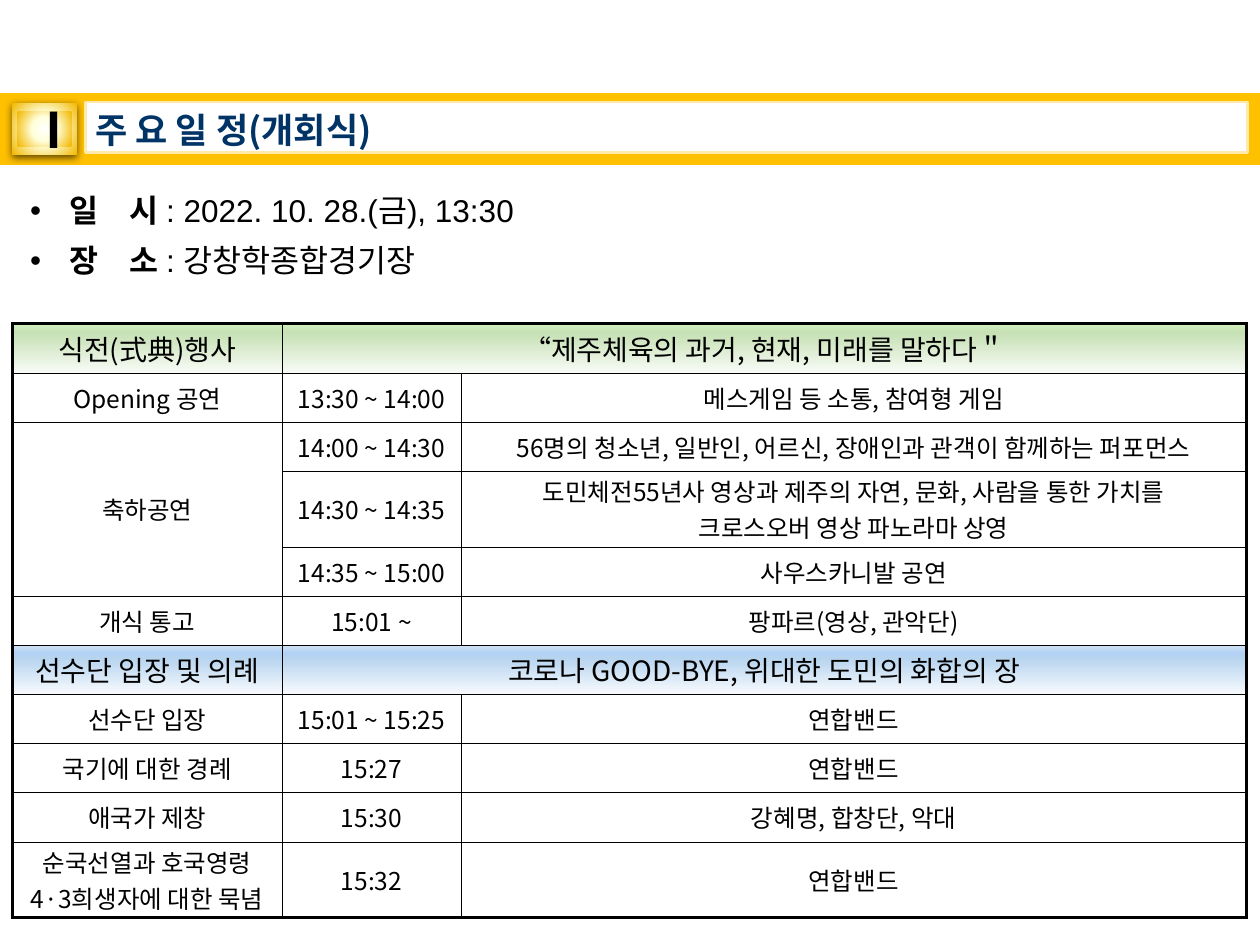
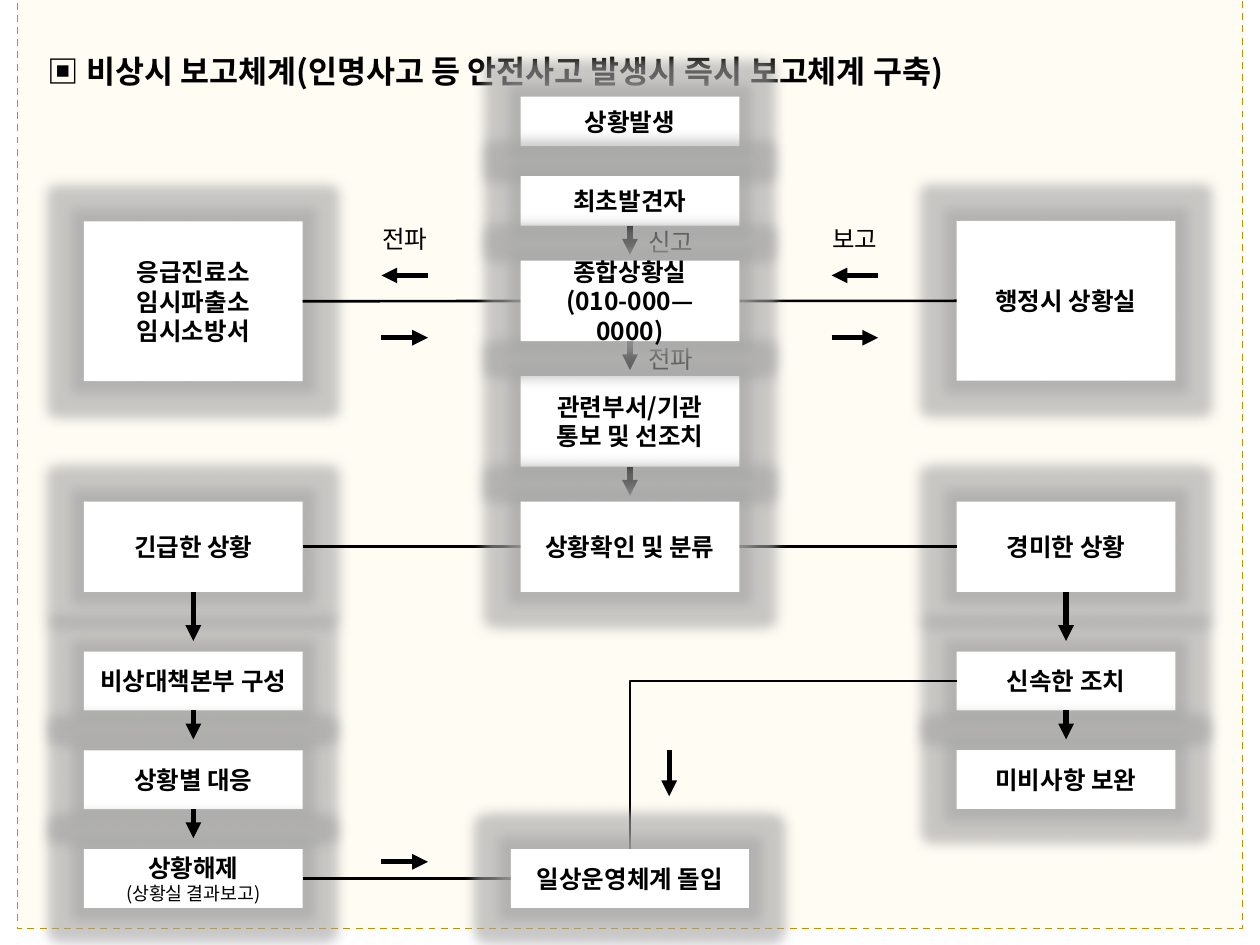
from lxml import etree
from pptx import Presentation
from pptx.dml.color import RGBColor
from pptx.enum.dml import MSO_LINE
from pptx.enum.shapes import MSO_CONNECTOR as Connector, MSO_SHAPE as Shape
from pptx.enum.text import MSO_ANCHOR as Anchor, MSO_AUTO_SIZE as AutoSize, PP_ALIGN as Align
from pptx.oxml import parse_xml
from pptx.oxml.ns import nsdecls, qn
from pptx.util import Pt

BLACK = RGBColor(0, 0, 0)
WHITE = RGBColor(255, 255, 255)
NAVY = RGBColor(0x00, 0x33, 0x66)
AMBER = RGBColor(0xFF, 0xC0, 0x00)
PALE_AMBER = RGBColor(0xFF, 0xEA, 0xAB)
CREAM = RGBColor(0xFF, 0xF6, 0xDD)
GOLD = RGBColor(0xBF, 0x90, 0x00)
GLOW_GREY = RGBColor(0xA5, 0xA5, 0xA5)
GREENS = [(0, RGBColor(0xF8, 0xFB, 0xF6)), (74, RGBColor(0xCB, 0xE3, 0xBB)),
          (83, RGBColor(0xC7, 0xE1, 0xB5)), (100, RGBColor(0xD2, 0xF1, 0xBD))]
BLUES = [(0, RGBColor(0xF7, 0xFA, 0xFD)), (74, RGBColor(0xB7, 0xD4, 0xEF)),
         (83, RGBColor(0xB2, 0xD1, 0xF4)), (100, RGBColor(0xD1, 0xE3, 0xF3))]
YELLOWS = [(0, WHITE), (40, RGBColor(0xFF, 0xFF, 0xD9)), (100, RGBColor(0xF2, 0xB8, 0x00))]
KOREAN = "Noto Sans CJK KR"
A = nsdecls("a")
UPWARD = '<a:lin ang="16200000" scaled="0"/>'
RADIAL = '<a:path path="circle"><a:fillToRect l="50000" t="50000" r="50000" b="50000"/></a:path>'


def style(frame, align, color=BLACK, **formats):
    for para in frame.paragraphs:
        para.alignment = align
        for span in para.runs:
            for name, value in {"name": KOREAN, **formats}.items():
                setattr(span.font, name, value)
            span.font.color.rgb = color
            etree.SubElement(span.font._element, qn("a:ea")).set("typeface", KOREAN)


def gradient(stops, direction):
    marks = "".join(f'<a:gs pos="{pos * 1000}"><a:srgbClr val="{color}"/></a:gs>' for pos, color in stops)
    return parse_xml(f'<a:gradFill {A} rotWithShape="1"><a:gsLst>{marks}</a:gsLst>{direction}</a:gradFill>')


deck = Presentation()
deck.slide_width, deck.slide_height = Pt(720), Pt(540)

page = deck.slides.add_slide(deck.slide_layouts[1])
tree = page.shapes.title.element.getparent()
band = page.shapes.add_shape(Shape.RECTANGLE, Pt(0), Pt(53.3), Pt(720), Pt(41))
band.shadow.inherit = False
band.fill.solid()
band.fill.fore_color.rgb = AMBER
band.line.fill.background()

title = page.shapes.title
tree.append(title.element)
title.left, title.top, title.width, title.height = Pt(49), Pt(58.3), Pt(664), Pt(29)
title.fill.solid()
title.fill.fore_color.rgb = WHITE
title.line.color.rgb = PALE_AMBER
title.line.width = Pt(1.5)
frame = title.text_frame
frame.text = "주 요 일 정(개회식)"
for name, value in {"margin_left": Pt(5.5), "margin_right": 0, "margin_top": 0, "margin_bottom": 0,
                    "vertical_anchor": Anchor.MIDDLE, "auto_size": AutoSize.NONE}.items():
    setattr(frame, name, value)
frame.paragraphs[0].line_spacing = 1.1
style(frame, Align.LEFT, NAVY, size=Pt(20), bold=True)

schedule = [
    ("식전(式典)행사", "“제주체육의 과거, 현재, 미래를 말하다＂", ""),
    ("Opening 공연", "13:30 ~ 14:00", "메스게임 등 소통, 참여형 게임"),
    ("축하공연", "14:00 ~ 14:30", "56명의 청소년, 일반인, 어르신, 장애인과 관객이 함께하는 퍼포먼스"),
    ("", "14:30 ~ 14:35", "도민체전55년사 영상과 제주의 자연, 문화, 사람을 통한 가치를\n크로스오버 영상 파노라마 상영"),
    ("", "14:35 ~ 15:00", "사우스카니발 공연"),
    ("개식 통고", "15:01 ~", "팡파르(영상, 관악단)"),
    ("선수단 입장 및 의례", "코로나 GOOD-BYE, 위대한 도민의 화합의 장", ""),
    ("선수단 입장", "15:01 ~ 15:25", "연합밴드"),
    ("국기에 대한 경례", "15:27", "연합밴드"),
    ("애국가 제창", "15:30", "강혜명, 합창단, 악대"),
    ("순국선열과 호국영령\n4·3희생자에 대한 묵념", "15:32", "연합밴드"),
]
section_fills = {0: GREENS, 6: BLUES}
last_row, last_column = len(schedule) - 1, 2
table = page.shapes.add_table(len(schedule), 3, Pt(7.2), Pt(185), Pt(705), Pt(340)).table
table.first_row = table.horz_banding = False
for column, width in zip(table.columns, (154, 102.3, 448.7)):
    column.width = Pt(width)
for row_index, texts in enumerate(schedule):
    table.rows[row_index].height = Pt(43.2 if any("\n" in text for text in texts) else 28.1)
    for column_index, text in enumerate(texts):
        cell = table.cell(row_index, column_index)
        cell.vertical_anchor = Anchor.MIDDLE
        for side in ("left", "right", "top", "bottom"):
            setattr(cell, f"margin_{side}", Pt(0.7))
        if text:
            cell.text_frame.text = text
            style(cell.text_frame, Align.CENTER, size=Pt(16 if row_index in section_fills else 14))
        properties = cell._tc.get_or_add_tcPr()
        outer_edges = {"L": column_index == 0, "R": column_index == last_column or (
            row_index in section_fills and column_index == 1), "T": row_index == 0, "B": row_index == last_row}
        for side, outer in outer_edges.items():
            width = Pt(1.7 if outer else 0.28)
            properties.append(parse_xml(
                f'<a:ln{side} {A} w="{width}"><a:solidFill><a:srgbClr val="{BLACK}"/></a:solidFill></a:ln{side}>'))
        if row_index in section_fills:
            properties.append(gradient(section_fills[row_index], UPWARD))
        else:
            cell.fill.background()
for row_index in section_fills:
    table.cell(row_index, 1).merge(table.cell(row_index, 2))
table.cell(2, 0).merge(table.cell(4, 0))

body = page.placeholders[1]
tree.append(body.element)
body.left, body.top, body.width, body.height = Pt(10), Pt(105.8), Pt(314), Pt(66)
frame = body.text_frame
frame.auto_size = AutoSize.NONE
frame.text = "일　시 \n장　소 "
for para, detail in zip(frame.paragraphs, (": 2022. 10. 28.(금), 13:30", ": 강창학종합경기장")):
    para.add_run().text = detail
    para.space_before = Pt(0 if detail.startswith(": 2022") else 7)
    for name, value in {"marL": Pt(22.5), "indent": -Pt(22.5)}.items():
        para._p.get_or_add_pPr().set(name, str(value))
style(frame, Align.LEFT, name="Arial", size=Pt(18), bold=False)
for para in frame.paragraphs:
    para.runs[0].font.bold = True

badge = page.shapes.add_group_shape()
for left, top, width, height in ((7, 59, 37, 29.5), (10, 64, 31, 19.5)):
    box = badge.shapes.add_shape(Shape.RECTANGLE, Pt(left), Pt(top), Pt(width), Pt(height))
    box.line.fill.background()
    box.shadow.inherit = False
    box.element.spPr.insert(2, gradient(YELLOWS, RADIAL))
plate, face = badge.shapes
plate.element.spPr.find(qn("a:effectLst")).append(parse_xml(
    f'<a:outerShdw {A} blurRad="{Pt(4.5)}" dist="{Pt(1.5)}" dir="5400000" rotWithShape="0">'
    f'<a:srgbClr val="{BLACK}"><a:alpha val="63000"/></a:srgbClr></a:outerShdw>'))
face.text_frame.text = "Ⅰ"
face.text_frame.vertical_anchor = Anchor.MIDDLE
style(face.text_frame, Align.CENTER, size=Pt(28), bold=True)

page = deck.slides.add_slide(deck.slide_layouts[5])
title = page.shapes.title
tree = title.element.getparent()
panel = page.shapes.add_shape(Shape.RECTANGLE, Pt(10), Pt(-8), Pt(700), Pt(538.7))
panel.shadow.inherit = False
panel.fill.solid()
panel.fill.fore_color.rgb = CREAM
etree.SubElement(panel.element.spPr.find(".//" + qn("a:srgbClr")), qn("a:alpha")).set("val", "30000")
panel.line.color.rgb = GOLD
panel.line.width = Pt(1)
panel.line.dash_style = MSO_LINE.DASH

tree.append(title.element)
title.left, title.top, title.width, title.height = Pt(20.2), Pt(26), Pt(675), Pt(29)
title.text_frame.text = "▣ 비상시 보고체계(인명사고 등 안전사고 발생시 즉시 보고체계 구축)"
title.text_frame.vertical_anchor = Anchor.TOP
title.text_frame.auto_size = AutoSize.NONE
style(title.text_frame, Align.LEFT, size=Pt(18), bold=True)

LEFT, CENTER, RIGHT = 48, 297.5, 546.7
steps = {
    "incident": ("상황발생", CENTER, 55.3, 28.3),
    "finder": ("최초발견자", CENTER, 100.7, 28.3),
    "responders": ("응급진료소\n임시파출소\n임시소방서", LEFT, 126.5, 91.4),
    "departments": ("관련부서/기관\n통보 및 선조치", CENTER, 215, 51.7),
    "urgent": ("긴급한 상황", LEFT, 286.6, 51.7),
    "quick_action": ("신속한 조치", RIGHT, 372.4, 33.6),
    "follow_up": ("미비사항 보완", RIGHT, 428.6, 33.6),
    "headquarters": ("비상대책본부 구성", LEFT, 372.4, 33.6),
    "response": ("상황별 대응", LEFT, 428.8, 33.6),
    "release": ("상황해제\n(상황실 결과보고)", LEFT, 485.2, 33.6),
    "minor": ("경미한 상황", RIGHT, 286.6, 51.7),
    "city_office": ("행정시 상황실", RIGHT, 126.2, 91.4),
    "triage": ("상황확인 및 분류", CENTER, 286.6, 51.7),
    "control_room": ("종합상황실\n(010-000—0000)", CENTER, 149, 46),
    "normal": ("일상운영체계 돌입", 292, 485.2, 33.6),
}
boxes = {}
for step, (text, left, top, height) in steps.items():
    width = 136 if step == "normal" else 125
    box = boxes[step] = page.shapes.add_shape(Shape.RECTANGLE, Pt(left), Pt(top), Pt(width), Pt(height))
    box.fill.solid()
    box.fill.fore_color.rgb = WHITE
    box.line.fill.background()
    box.shadow.inherit = False
    box.element.spPr.find(qn("a:effectLst")).append(parse_xml(
        f'<a:glow {A} rad="{Pt(14)}"><a:srgbClr val="{GLOW_GREY}"><a:alpha val="60000"/></a:srgbClr></a:glow>'))
    box.text_frame.text = text
    box.text_frame.vertical_anchor = Anchor.MIDDLE
    style(box.text_frame, Align.CENTER, size=Pt(14), bold=True)
note = boxes["release"].text_frame.paragraphs[1].runs[0].font
note.size, note.bold = Pt(10.5), False

lines, arrows = [], []
for start, end, start_side, end_side in (
        ("control_room", "responders", 1, 3), ("city_office", "control_room", 1, 3),
        ("triage", "urgent", 1, 3), ("minor", "triage", 1, 3),
        ("normal", "release", 1, 3), ("quick_action", "normal", 1, 0)):
    bent = end_side == 0
    link = page.shapes.add_connector(Connector.ELBOW if bent else Connector.STRAIGHT, 0, 0, 0, 0)
    link.begin_connect(boxes[start], start_side)
    link.end_connect(boxes[end], end_side)
    if bent:
        link.element.spPr.find(qn("a:prstGeom")).set("prst", "bentConnector2")
    lines.append(link)
for step, length in (("finder", 16.5), ("control_room", 16.5), ("departments", 16.5), ("urgent", 28),
                     ("headquarters", 16.5), ("response", 16.5), ("minor", 28), ("quick_action", 16.5)):
    box = boxes[step]
    middle, bottom = box.left + box.width // 2, box.top + box.height
    arrow = page.shapes.add_connector(Connector.STRAIGHT, middle, bottom, middle, bottom + Pt(length))
    arrow.begin_connect(box, 2)
    arrows.append(arrow)
for points in ((218, 193, 244.6, 193), (244.6, 157.4, 218, 157.4), (475.2, 193, 501.8, 193),
               (501.8, 157.4, 475.2, 157.4), (218, 492.5, 244.6, 492.5), (382.4, 428.6, 382.4, 455)):
    arrows.append(page.shapes.add_connector(Connector.STRAIGHT, *map(Pt, points)))
for line in lines + arrows:
    line.line.color.rgb = BLACK
    line.line.width = Pt(3 if line in arrows else 1.5)
    if line in arrows:
        etree.SubElement(line.element.spPr.find(qn("a:ln")), qn("a:tailEnd")).set("type", "triangle")
    etree.SubElement(line.element.spPr, qn("a:effectLst"))

for text, left, top in (("신고", 362.2, 126), ("전파", 362.2, 192.8), ("전파", 210.2, 124), ("보고", 467.3, 124)):
    label = page.shapes.add_textbox(Pt(left), Pt(top), Pt(42.5), Pt(24.5))
    label.text_frame.word_wrap = False
    label.text_frame.vertical_anchor = Anchor.MIDDLE
    label.text_frame.text = text
    style(label.text_frame, Align.CENTER, size=Pt(14))

for step in ("triage", "control_room", "normal"):
    tree.append(boxes[step].element)
tree.append(arrows[1].element)
tree.remove(arrows[1].element)
boxes["triage"].element.addprevious(arrows[1].element)

deck.save("out.pptx")
